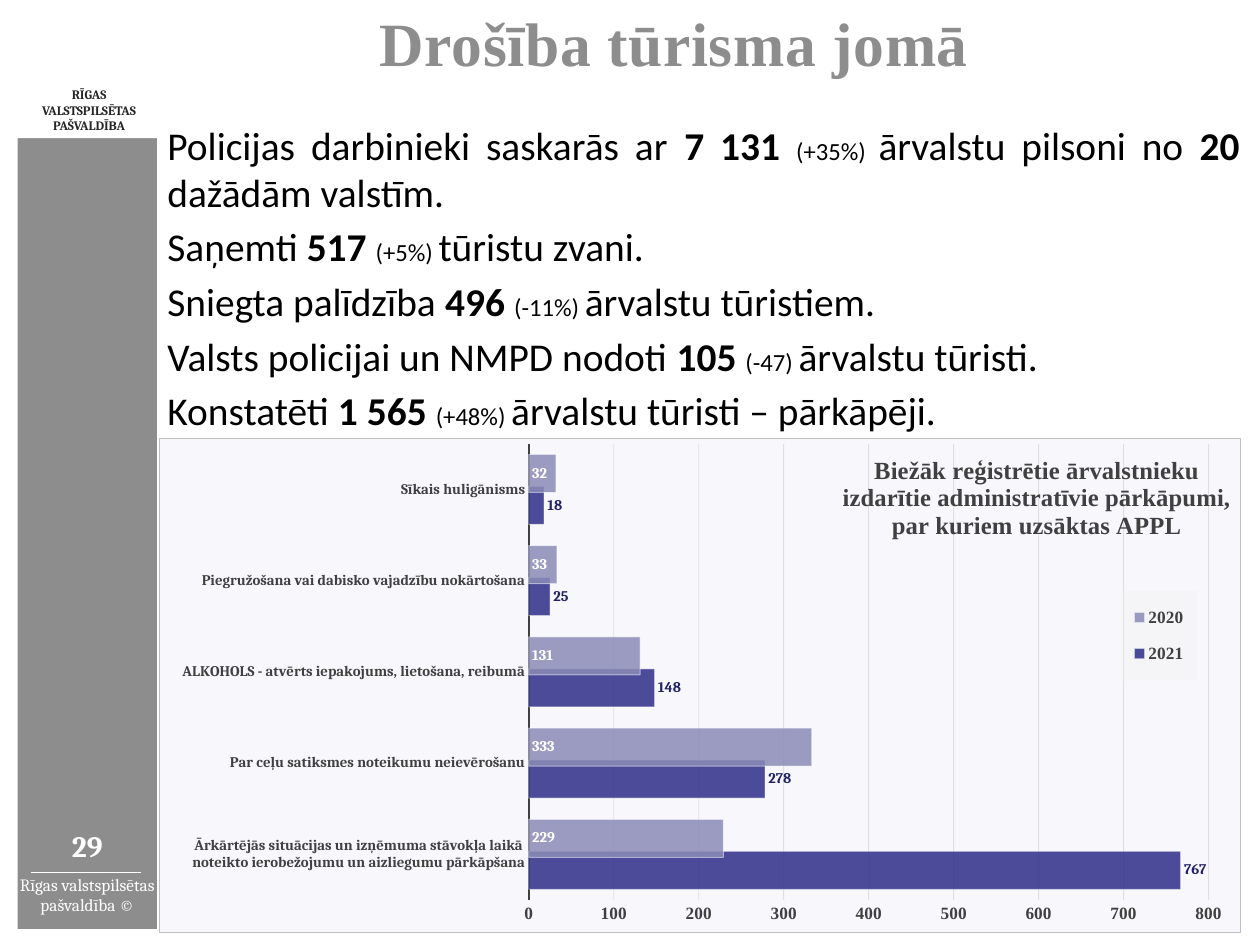
import pptx
import pptx.util
import pptx.oxml
import pptx.oxml.ns
import pptx.dml.color
import pptx.chart.data
import pptx.enum.chart
import pptx.enum.shapes
import pptx.enum.text

WIDE, HIGH = 14.22, 10.67
GREY, WHITE, DARK = "8C8D8C", "FFFFFF", "404040"
SERIF, TIMES = "Cambria", "Times New Roman"

TITLE = "Drošība tūrisma jomā"
OWNER = "RĪGAS VALSTSPILSĒTAS PAŠVALDĪBA"
FOOTER = "Rīgas valstspilsētas pašvaldība ©"
NUMBER = "29"

# Parts of each fact: plain, bold, small, plain, bold, plain
FACTS = [
    ("Policijas darbinieki saskarās ar ", "7 131 ", "(+35%) ",
     "ārvalstu pilsoni no ", "20 ", "dažādām valstīm."),
    ("Saņemti ", "517 ", "(+5%) ", "tūristu zvani."),
    ("Sniegta palīdzība ", "496 ", "(-11%) ", "ārvalstu tūristiem."),
    ("Valsts policijai un NMPD nodoti ", "105 ", "(-47) ", "ārvalstu tūristi."),
    ("Konstatēti ", "1 565 ", "(+48%) ", "ārvalstu tūristi – pārkāpēji."),
]
STYLES = [(32, False), (32, True), (20, False), (32, False), (32, True), (32, False)]

HEADING = ["Biežāk reģistrētie ārvalstnieku",
           "izdarītie administratīvie pārkāpumi,",
           "par kuriem uzsāktas APPL"]
GROUPS = [
    "Ārkārtējās situācijas un izņēmuma stāvokļa laikā noteikto ierobežojumu un aizliegumu pārkāpšana",
    "Par ceļu satiksmes noteikumu neievērošanu",
    "ALKOHOLS - atvērts iepakojums, lietošana, reibumā",
    "Piegružošana vai dabisko vajadzību nokārtošana",
    "Sīkais huligānisms",
]
SPOT = pptx.enum.chart.XL_LABEL_POSITION
# Year, values, bar colour, label colour, label place
YEARS = [
    ("2021", (767, 278, 148, 25, 18), "2D2D88", "222267", SPOT.OUTSIDE_END),
    ("2020", (229, 333, 131, 33, 32), "8B8BB7", WHITE, SPOT.INSIDE_BASE),
]

# Left, top, width, height as per cent of the slide
BAND = (1.41, 14.06, 11.04, 84.25)
FOOT = (1.41, 92.6, 11.04, 4.12)
PAGE = (1.41, 87.07, 11.04, 4.78)
RULE = (2.46, 92.32, 8.72, 0)
BADGE = (1.27, 8.72, 11.6, 5.9)
HEAD = (7.03, 0, 92.97, 8.8)
BODY = (12.87, 12.37, 85.94, 33.93)
CHART = (12.59, 46.3, 85.86, 52.39)

# Opacity in per cent of the colours in the chart
CLEAR = {
    "//c:ser/c:spPr/a:solidFill/a:srgbClr": 85,
    "//c:ser/c:spPr/a:ln//a:srgbClr": 50,
    "//c:majorGridlines//a:srgbClr": 10,
    "/c:chartSpace/c:spPr/a:solidFill/a:srgbClr": 17,
    "//c:legend/c:spPr/a:solidFill/a:srgbClr": 40,
}

ALIGN = pptx.enum.text.PP_ALIGN
MIDDLE = pptx.enum.text.MSO_ANCHOR.MIDDLE
NONE = pptx.enum.chart.XL_TICK_MARK.NONE


def color(code):
    return pptx.dml.color.RGBColor.from_string(code)


def area(box):
    """Turn per cents of the slide into lengths."""
    return [pptx.util.Inches(part * side / 100)
            for part, side in zip(box, (WIDE, HIGH) * 2)]


def dress(font, size, face=SERIF, ink=DARK, bold=True):
    font.size = pptx.util.Pt(size)
    font.name = face
    font.bold = bold
    font.color.rgb = color(ink)


def write(para, text, align=None, **style):
    """Add a run to a paragraph; style goes to dress."""
    run = para.add_run()
    run.text = text
    dress(run.font, **style)
    if align is not None:
        para.alignment = align
    return run


def stroke(line, ink, width):
    line.color.rgb = color(ink)
    line.width = pptx.util.Pt(width)


def setup(frame, inset):
    frame.word_wrap = True
    frame.vertical_anchor = MIDDLE
    frame.margin_left = frame.margin_right = pptx.util.Inches(inset)
    frame.margin_top = frame.margin_bottom = pptx.util.Inches(inset)
    return frame


def block(slide, box, fill):
    shape = slide.shapes.add_shape(pptx.enum.shapes.MSO_SHAPE.RECTANGLE, *area(box))
    shape.shadow.inherit = False
    shape.fill.solid()
    shape.fill.fore_color.rgb = color(fill)
    shape.line.fill.background()
    return shape


def label(slide, box, inset=0):
    return setup(slide.shapes.add_textbox(*area(box)).text_frame, inset)


def node(text):
    return pptx.oxml.parse_xml(text.replace(">", f" {pptx.oxml.ns.nsdecls('c', 'a')}>", 1))


def place(part, index, **spots):
    """Give a chart part a fixed place, as shares of the chart."""
    for old in part.xpath("c:layout"):
        part.remove(old)
    inner = '<c:layoutTarget val="inner"/>' if index == 0 else ""
    modes = "".join(f'<c:{key}Mode val="edge"/>' for key in "xy")
    sizes = "".join(f'<c:{key} val="{val}"/>' for key, val in spots.items())
    part.insert(index, node(f"<c:layout><c:manualLayout>{inner}{modes}{sizes}"
                            "</c:manualLayout></c:layout>"))


def panel(fill, line):
    return node(f'<c:spPr><a:solidFill><a:srgbClr val="{fill}"/></a:solidFill>{line}</c:spPr>')


def sidebar(slide):
    block(slide, BAND, GREY)
    write(label(slide, FOOT).paragraphs[0], FOOTER, ALIGN.CENTER,
          size=14, ink=WHITE, bold=False)
    left, top, width, _ = area(RULE)
    rule = slide.shapes.add_connector(pptx.enum.shapes.MSO_CONNECTOR.STRAIGHT,
                                      left, top, left + width, top)
    stroke(rule.line, WHITE, 1)
    rule.element.spPr.append(node("<a:effectLst></a:effectLst>"))
    frame = setup(block(slide, BADGE, WHITE).text_frame, 0.1)
    write(frame.paragraphs[0], OWNER, ALIGN.CENTER, size=10.5, ink="262626")
    write(label(slide, PAGE).paragraphs[0], NUMBER, ALIGN.CENTER, size=24, ink=WHITE)


def facts(slide):
    frame = label(slide, BODY, 0.06)
    for index, parts in enumerate(FACTS):
        para = frame.add_paragraph() if index else frame.paragraphs[0]
        if index:
            para.space_before = pptx.util.Pt(6)
        for text, (size, bold) in zip(parts, STYLES):
            write(para, text, ALIGN.JUSTIFY, size=size, face="Calibri",
                  ink="000000", bold=bold)


def graph(slide):
    data = pptx.chart.data.CategoryChartData()
    data.categories = GROUPS
    for year, values, *_ in YEARS:
        data.add_series(year, values)
    chart = slide.shapes.add_chart(pptx.enum.chart.XL_CHART_TYPE.BAR_CLUSTERED,
                                   *area(CHART), data).chart
    dress(chart.font, 10, ink="000000", bold=False)
    plot = chart.plots[0]
    plot.gap_width, plot.overlap, plot.vary_by_categories = 56, 16, False
    for bars, (_, _, fill, ink, spot) in zip(plot.series, YEARS):
        bars.invert_if_negative = False
        bars.format.fill.solid()
        bars.format.fill.fore_color.rgb = color(fill)
        stroke(bars.format.line, WHITE, 0.75)
        tags = bars.data_labels
        tags.show_value, tags.position = True, spot
        dress(tags.font, 12, ink=ink)

    names, scale = chart.category_axis, chart.value_axis
    names.major_tick_mark = scale.major_tick_mark = NONE
    dress(names.tick_labels.font, 12)
    stroke(names.format.line, DARK, 1.5)
    dress(scale.tick_labels.font, 14, TIMES)
    scale.minimum_scale, scale.maximum_scale, scale.major_unit = 0, 800, 100
    scale.format.line.fill.background()
    stroke(scale.major_gridlines.format.line, "0D0D0D", 0.75)

    title = chart.chart_title.text_frame
    for index, text in enumerate(HEADING):
        para = title.add_paragraph() if index else title.paragraphs[0]
        write(para, text, ALIGN.CENTER, size=20, face=TIMES)
    chart.has_legend = True
    chart.legend.position = pptx.enum.chart.XL_LEGEND_POSITION.RIGHT
    chart.legend.include_in_layout = False
    dress(chart.legend.font, 14, TIMES)

    root = chart.element
    place(root.xpath("//c:plotArea")[0], 0, x=0.342, y=0.012, w=0.629, h=0.923)
    place(root.xpath("//c:chart/c:title")[0], 1, x=0.63, y=0.03)
    place(root.xpath("//c:legend")[0], 1, x=0.89, y=0.31, w=0.07, h=0.18)
    root.xpath("//c:chart/c:title/c:overlay")[0].set("val", "1")
    root.xpath("//c:legend/c:overlay")[0].addnext(panel("F2F2F2", ""))
    edge = ('<a:ln w="9525"><a:solidFill><a:srgbClr val="BFBFBF"/>'
            "</a:solidFill></a:ln>")
    root.xpath("/c:chartSpace/c:chart")[0].addnext(panel("D1D1F0", edge))
    for query, share in CLEAR.items():
        for paint in root.xpath(query):
            paint.append(node(f'<a:alpha val="{share * 1000}"></a:alpha>'.replace(
                "<a:alpha val", "<a:alpha val")))


def main():
    deck = pptx.Presentation()
    deck.slide_width, deck.slide_height = area((0, 0, 100, 100))[2:]
    slide = deck.slides.add_slide(deck.slide_layouts[5])
    sidebar(slide)
    head = slide.shapes.title
    head.left, head.top, head.width, head.height = area(HEAD)
    run = write(setup(head.text_frame, 0.06).paragraphs[0], TITLE, ALIGN.CENTER,
                size=50, face=TIMES, ink=GREY)
    run.font._element.set("spc", "50")
    facts(slide)
    graph(slide)
    deck.save("out.pptx")


if __name__ == "__main__":
    main()
